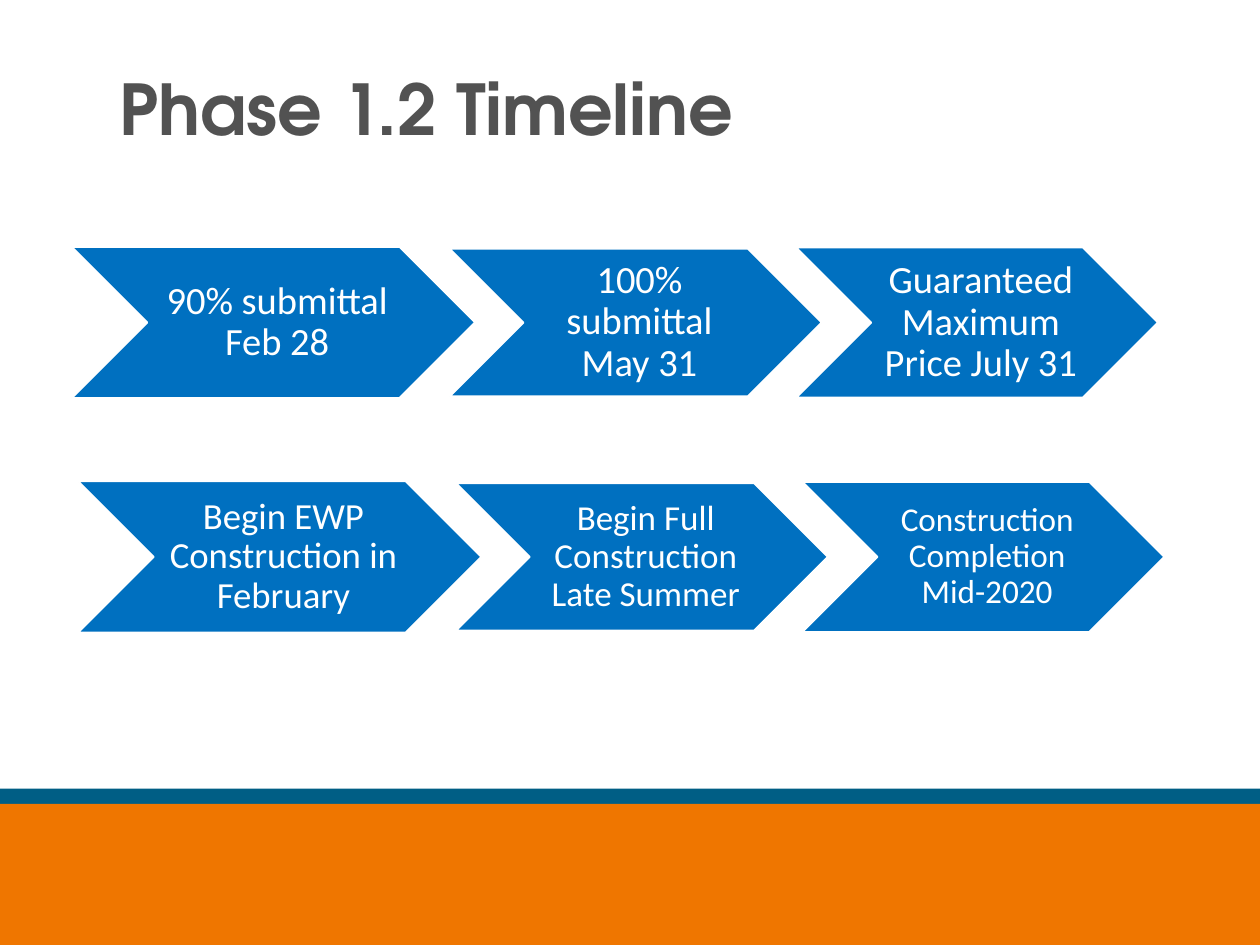
from dataclasses import dataclass
from pptx import Presentation
from pptx.dml.color import RGBColor
from pptx.enum.shapes import MSO_SHAPE
from pptx.enum.text import MSO_ANCHOR, MSO_AUTO_SIZE, PP_ALIGN
from pptx.util import Inches, Pt


@dataclass(frozen=True)
class Theme:
    white: RGBColor = RGBColor.from_string("FFFFFF")
    title: RGBColor = RGBColor.from_string("525252")
    step: RGBColor = RGBColor.from_string("0070C0")
    stripe: RGBColor = RGBColor.from_string("005E85")
    footer: RGBColor = RGBColor.from_string("EF7600")
    title_font: str = "TeX Gyre Adventor"
    step_font: str = "Calibri"
    title_size: int = 40
    step_sizes: tuple = ((22, 22, 22), (21, 20, 19))


theme = Theme()


def add_filled_shape(preset, left, top, width, height, color):
    shape = slide.shapes.add_shape(
        preset, Inches(left), Inches(top), Inches(width), Inches(height)
    )
    shape.shadow.inherit = False
    shape.fill.solid()
    shape.fill.fore_color.rgb = color
    shape.line.fill.background()
    return shape


def write_text(text_frame, text, font_name, size, color, alignment):
    text_frame.word_wrap = True
    text_frame.auto_size = MSO_AUTO_SIZE.NONE
    text_frame.vertical_anchor = MSO_ANCHOR.MIDDLE
    paragraph = text_frame.paragraphs[0]
    paragraph.alignment = alignment
    paragraph.line_spacing = 0.9
    run = paragraph.add_run()
    run.text = text
    run.font.name = font_name
    run.font.size = Pt(size)
    run.font.color.rgb = color
    return run


presentation = Presentation()
presentation.slide_width = Inches(10)
presentation.slide_height = Inches(7.5)
slide = presentation.slides.add_slide(presentation.slide_layouts[5])
slide.background.fill.solid()
slide.background.fill.fore_color.rgb = theme.white

for top, color in ((6.26, theme.stripe), (6.38, theme.footer)):
    add_filled_shape(MSO_SHAPE.RECTANGLE, 0, top, 10, 7.5 - top, color)

title = slide.shapes.title
title.left, title.top = Inches(0.85), Inches(0.17)
title.width, title.height = Inches(8.62), Inches(1.45)
title_run = write_text(
    title.text_frame, "Phase 1.2 Timeline", theme.title_font,
    theme.title_size, theme.title, PP_ALIGN.LEFT,
)
title_run.font.bold = True

columns = ((0.57, 3.2, 1.2), (3.57, 2.95, 1.17), (6.32, 2.87, 1.19))
rows = (
    (0, 2.56, ("90% submittal Feb 28", "100% submittal May 31",
               "Guaranteed Maximum Price July 31")),
    (0.05, 4.42, ("Begin EWP Construction in February",
                  "Begin Full Construction Late Summer",
                  "Construction Completion Mid-2020")),
)

for (indent, middle, steps), sizes in zip(rows, theme.step_sizes):
    for (left, width, height), step, size in zip(columns, steps, sizes):
        chevron = add_filled_shape(
            MSO_SHAPE.CHEVRON, left + indent, middle - height / 2,
            width, height, theme.step,
        )
        chevron.line.color.rgb = theme.white
        chevron.line.width = Pt(1)
        text_frame = chevron.text_frame
        text_frame.margin_left = Inches(0.09)
        text_frame.margin_right = Inches(0.03)
        text_frame.margin_top = text_frame.margin_bottom = Inches(0.03)
        write_text(text_frame, step, theme.step_font, size,
                   theme.white, PP_ALIGN.CENTER)

presentation.save("out.pptx")
